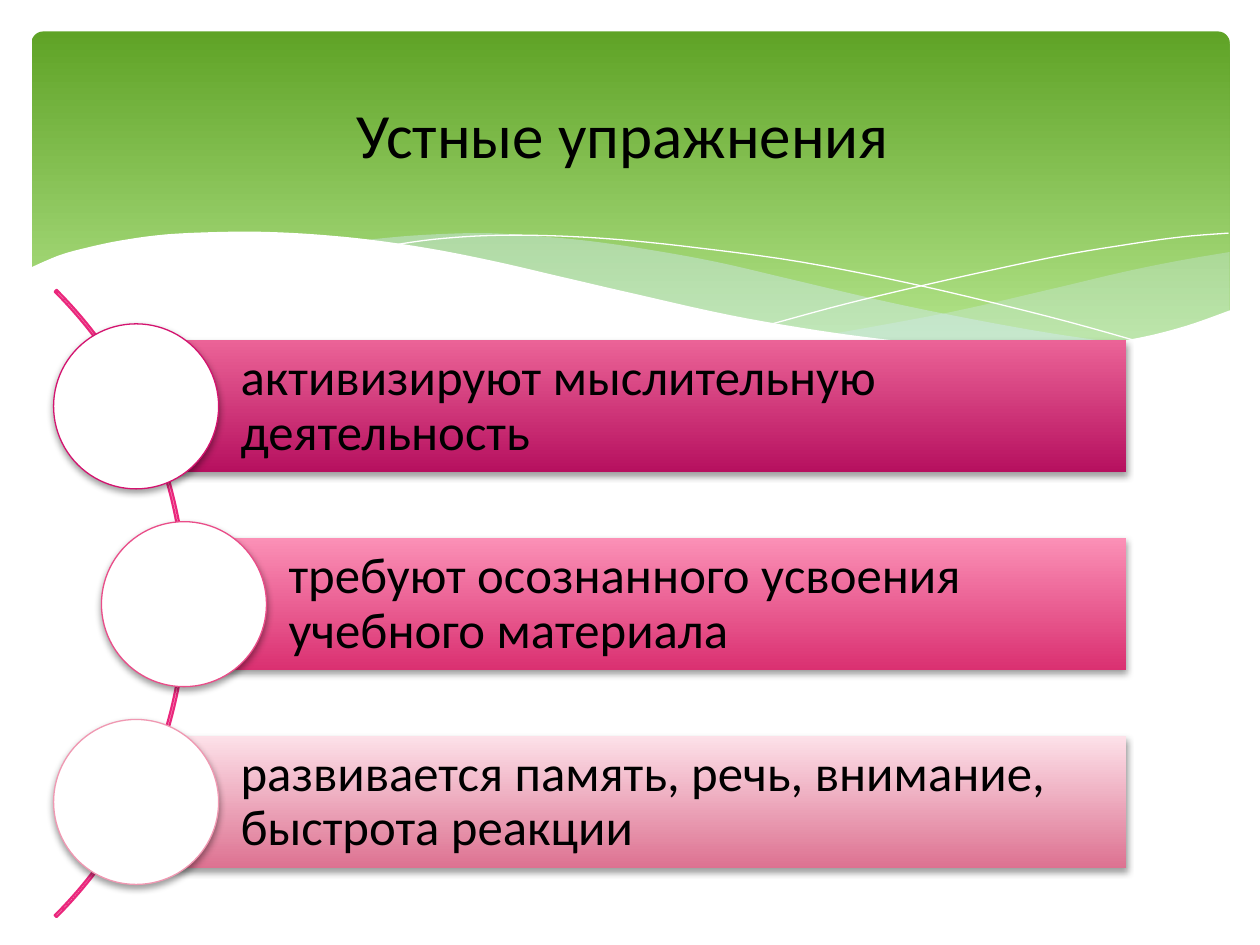
from lxml import etree
from pptx import Presentation
from pptx.dml.color import RGBColor
from pptx.enum.shapes import MSO_SHAPE
from pptx.enum.text import MSO_ANCHOR, PP_ALIGN
from pptx.oxml.ns import qn
from pptx.util import Inches, Pt

ROUNDED, RECTANGLE = MSO_SHAPE.ROUNDED_RECTANGLE, MSO_SHAPE.RECTANGLE
OVAL, BLOCK_ARC = MSO_SHAPE.OVAL, MSO_SHAPE.BLOCK_ARC
MIDDLE = MSO_ANCHOR.MIDDLE
LEFT, CENTER = PP_ALIGN.LEFT, PP_ALIGN.CENTER
FONT = "Calibri"
COLORS = {
    "green_top": "5FA326", "green_bottom": "B2E389", "mist": "D6ECFF",
    "white": "FFFFFF", "black": "000000", "arc": "EA277C",
}


def paint(shape, fill=None, line=None, width=0, shadow=False):
    """Fill is None, one colour or (top colour, bottom colour, end position)."""
    shape.shadow.inherit = False
    if fill is None:
        shape.fill.background()
    elif isinstance(fill, str):
        shape.fill.solid()
        shape.fill.fore_color.rgb = RGBColor.from_string(fill)
    else:
        shape.fill.gradient()
        shape.fill.gradient_angle = 270
        for stop, color, position in zip(shape.fill.gradient_stops, fill, (0, fill[2])):
            stop.color.rgb = RGBColor.from_string(color)
            stop.position = position
    if line is None:
        shape.line.fill.background()
    else:
        shape.line.color.rgb = RGBColor.from_string(line)
        shape.line.width = Pt(width)
    if shadow:
        effects = shape.element.spPr.find(qn("a:effectLst"))
        outer = etree.SubElement(effects, qn("a:outerShdw"), blurRad=str(Pt(4)),
                                 dist=str(Pt(2)), dir="5400000", rotWithShape="0")
        color = etree.SubElement(outer, qn("a:srgbClr"), val=COLORS["black"])
        etree.SubElement(color, qn("a:alpha"), val="38000")


def smooth(knots, steps=5):
    """Points of a Catmull-Rom curve through the knots."""
    padded = [knots[0], *knots, knots[-1]]
    points = [knots[0]]
    for a, b, c, d in zip(padded, padded[1:], padded[2:], padded[3:]):
        for step in range(1, steps + 1):
            t = step / steps
            points.append(tuple(
                (2 * q + (r - p) * t + (2 * p - 5 * q + 4 * r - s) * t ** 2
                 + (3 * q - p - 3 * r + s) * t ** 3) / 2
                for p, q, r, s in zip(a, b, c, d)))
    return points


presentation = Presentation()
presentation.slide_width, presentation.slide_height = Inches(10), Inches(7.5)
slide = presentation.slides.add_slide(presentation.slide_layouts[5])
shapes = slide.shapes

# Green header
header = shapes.add_shape(ROUNDED, Inches(0.25), Inches(0.25), Inches(9.51), Inches(2.7))
header.adjustments[0] = 0.034
paint(header, (COLORS["green_top"], COLORS["green_bottom"], 0.9))

# Waves: curves that make up each outline, fill, opacity in percent
waves = [
    ([[(9.76, 2), (9.35, 2.07), (8.91, 2.16), (8.32, 2.3), (7.53, 2.48), (6.61, 2.65)],
      [(6.61, 2.65), (7.05, 2.71), (7.57, 2.76), (8.03, 2.78), (8.54, 2.76),
       (8.97, 2.7), (9.35, 2.62), (9.76, 2.47)]], COLORS["mist"], 29),
    ([[(8.93, 2.73), (8.37, 2.65), (7.75, 2.54), (7.06, 2.4), (6.29, 2.22), (5.69, 2.08),
       (5.14, 1.98), (4.65, 1.91), (4.2, 1.87), (3.8, 1.85), (3.28, 1.87), (2.86, 1.91)],
      [(2.86, 1.91), (3.42, 1.99), (4.04, 2.11), (4.49, 2.22), (5.3, 2.4), (6.01, 2.55),
       (6.65, 2.66), (7.22, 2.74), (7.73, 2.77), (8.18, 2.78), (8.57, 2.77),
       (8.93, 2.73)]], COLORS["mist"], 40),
    ([[(3.09, 1.95), (3.44, 1.9), (3.87, 1.87), (4.33, 1.87), (4.89, 1.9), (5.56, 1.97),
       (6.36, 2.08), (7.27, 2.26), (8.31, 2.51), (9.07, 2.72)]], None, None),
    ([[(6.13, 2.57), (6.72, 2.41), (7.48, 2.23), (8.36, 2.04), (8.95, 1.94),
       (9.38, 1.88), (9.75, 1.85)]], None, None),
    ([[(9.77, 2.46), (9.4, 2.59), (8.99, 2.69), (8.5, 2.75), (8.09, 2.77), (7.61, 2.75),
       (7.08, 2.7), (6.48, 2.62), (5.79, 2.5), (5.03, 2.33), (4.47, 2.2), (3.91, 2.07),
       (3.4, 1.97), (2.92, 1.9), (2.5, 1.86), (2.11, 1.84), (1.77, 1.84), (1.32, 1.86),
       (0.95, 1.91), (0.67, 1.97), (0.46, 2.03), (0.23, 2.13)],
      [(0.23, 3.29), (9.77, 3.29)]], COLORS["white"], 100),
]
for curves, fill, opacity in waves:
    points = [(Inches(x), Inches(y)) for curve in curves for x, y in smooth(curve)]
    builder = shapes.build_freeform(*points[0])
    builder.add_line_segments(points[1:], close=fill is not None)
    wave = builder.convert_to_shape()
    paint(wave, fill, None if fill else COLORS["white"])
    if fill:
        color = wave.element.spPr.find(qn("a:solidFill"))[0]
        etree.SubElement(color, qn("a:alpha"), val=str(opacity * 1000))

# Title, brought in front of the header
title = shapes.title
title.element.getparent().append(title.element)
title.left, title.top = Inches(0.5), Inches(0.37)
title.width, title.height = Inches(9), Inches(1.37)
title.text_frame.text = "Устные упражнения "
title.text_frame.vertical_anchor = MIDDLE
paragraph = title.text_frame.paragraphs[0]
paragraph.alignment = CENTER
font = paragraph.runs[0].font
font.name, font.size = FONT, Pt(36)
font.color.rgb = RGBColor.from_string(COLORS["black"])

# Arc behind the list, from 315 to 45 degrees
arc = shapes.add_shape(BLOCK_ARC, Inches(-5.56), Inches(1.27), Inches(7.04), Inches(7.04))
for index, value in enumerate((189, 27, 0.003)):
    arc.adjustments[index] = value
paint(arc, None, COLORS["arc"], 1.25)

# List: text, left edge of the bar, bar colours, ring colour
items = [
    ("активизируют мыслительную деятельность", 1.08, ("EB6397", "B6105F", 1), "D4136F"),
    ("требуют осознанного усвоения учебного материала", 1.46, ("FB90B6", "DA3071", 1), "EA4D89"),
    ("развивается память, речь, внимание, быстрота реакции", 1.08, ("FDE1E9", "DD7291", 1), "F098B2"),
]
BAR_RIGHT, BAR_HEIGHT, DIAMETER = 8.94, 1.05, 1.31
for row, (text, left, gradient, ring) in enumerate(items):
    top = 2.7 + 1.57 * row
    bar = shapes.add_shape(RECTANGLE, Inches(left), Inches(top),
                           Inches(BAR_RIGHT - left), Inches(BAR_HEIGHT))
    paint(bar, gradient, shadow=True)
    frame = bar.text_frame
    frame.text = text
    frame.word_wrap = True
    frame.vertical_anchor = MIDDLE
    frame.margin_left = Inches(0.83)
    frame.margin_top = frame.margin_right = frame.margin_bottom = Inches(0.08)
    paragraph = frame.paragraphs[0]
    paragraph.alignment = LEFT
    paragraph.line_spacing = 0.9
    font = paragraph.runs[0].font
    font.name, font.size = FONT, Pt(29)
    font.color.rgb = RGBColor.from_string(COLORS["black"])

    circle = shapes.add_shape(OVAL, Inches(left - DIAMETER / 2),
                              Inches(top + (BAR_HEIGHT - DIAMETER) / 2),
                              Inches(DIAMETER), Inches(DIAMETER))
    paint(circle, COLORS["white"], ring, 0.75, shadow=True)

presentation.save("out.pptx")
